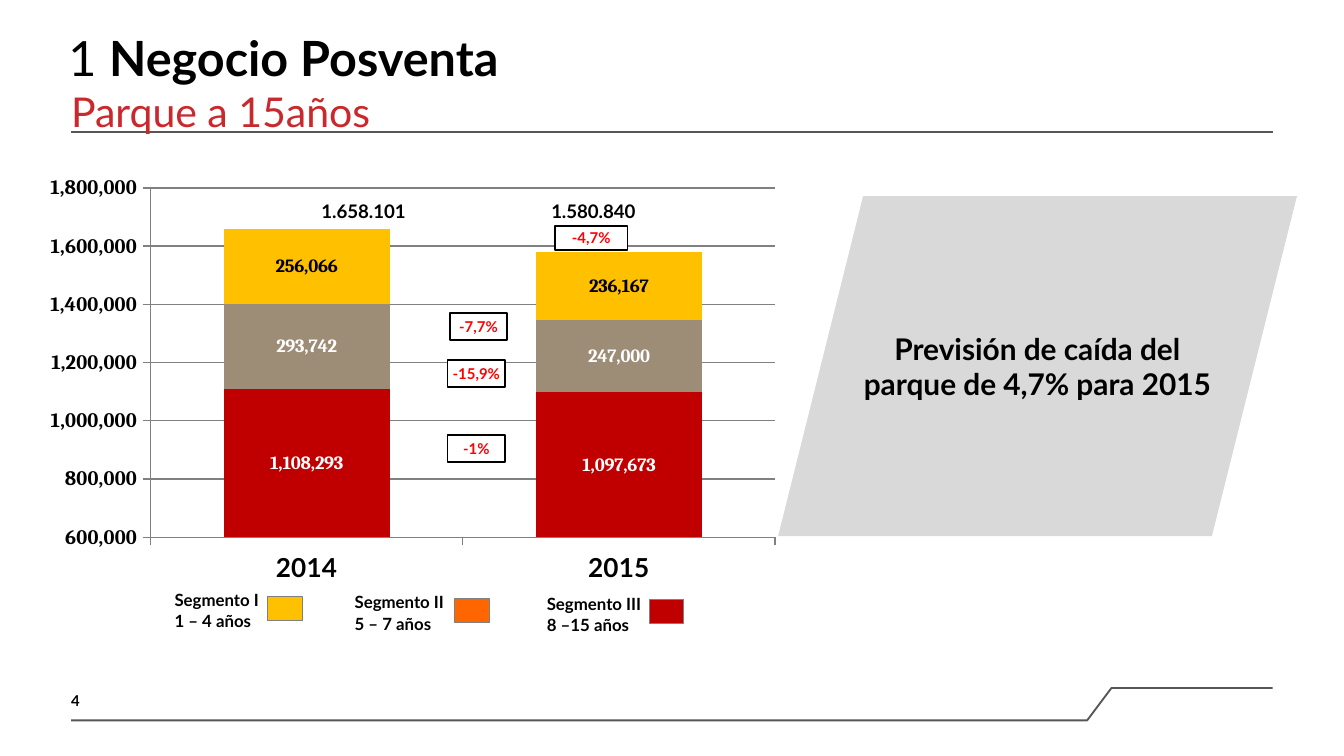
from typing import NamedTuple

from lxml import etree
from pptx import Presentation
from pptx.chart.data import CategoryChartData
from pptx.dml.color import RGBColor
from pptx.enum.chart import XL_CHART_TYPE as ChartType, XL_TICK_MARK as Tick
from pptx.enum.shapes import MSO_CONNECTOR as Connector, MSO_SHAPE as Shape
from pptx.enum.text import MSO_ANCHOR as Anchor, PP_ALIGN as Align
from pptx.oxml import parse_xml
from pptx.oxml.ns import nsdecls, qn
from pptx.util import Inches, Pt

BLACK = RGBColor(0, 0, 0)
WHITE = RGBColor(255, 255, 255)
RULE = RGBColor(0x56, 0x56, 0x56)
GREY = RGBColor(0x80, 0x80, 0x80)
PANEL = RGBColor(0xD9, 0xD9, 0xD9)
SUBTITLE = RGBColor(0xC9, 0x28, 0x2D)
RED = RGBColor(255, 0, 0)
DARK_RED = RGBColor(0xC0, 0, 0)
TAUPE = RGBColor(0x9D, 0x8D, 0x77)
YELLOW = RGBColor(0xFF, 0xC0, 0)
ORANGE = RGBColor(0xFF, 0x66, 0)


class Box(NamedTuple):
    x: float
    y: float
    w: float
    h: float


class Series(NamedTuple):
    name: str
    values: tuple
    color: RGBColor
    label_color: RGBColor


class Change(NamedTuple):
    text: str
    box: Box


class LegendItem(NamedTuple):
    lines: tuple
    text_box: Box
    swatch: Box
    color: RGBColor


SERIES = [
    Series("Series 1", (1108293, 1097673), DARK_RED, WHITE),
    Series("Series 2", (293742, 247000), TAUPE, WHITE),
    Series("Series 3", (256066, 236167), YELLOW, BLACK),
]
TOTALS = [("1.658.101", 2.28), ("1.580.840", 3.99)]
CHANGES = [
    Change("-4,7%", Box(4.13, 1.68, 0.54, 0.18)),
    Change("-7,7%", Box(3.35, 2.33, 0.42, 0.2)),
    Change("-15,9%", Box(3.33, 2.68, 0.43, 0.2)),
    Change("-1%", Box(3.33, 3.24, 0.43, 0.2)),
]
LEGEND = [
    LegendItem(("Segmento I", "1 – 4 años"), Box(1.2, 4.39, 1.12, 0.36),
               Box(1.99, 4.44, 0.26, 0.18), YELLOW),
    LegendItem(("Segmento II", "5 – 7 años"), Box(2.54, 4.41, 1.12, 0.36),
               Box(3.38, 4.45, 0.26, 0.18), ORANGE),
    LegendItem(("Segmento III", "8 –15 años"), Box(3.97, 4.42, 1.18, 0.36),
               Box(4.83, 4.46, 0.26, 0.18), DARK_RED),
]


def inches(box: Box) -> list:
    return [Inches(v) for v in box]


def set_font(font, size: float, color: RGBColor = BLACK, bold: bool = True,
             name: str = "Lato") -> None:
    values = {"size": Pt(size), "bold": bold, "name": name}
    for key, value in values.items():
        setattr(font, key, value)
    font.color.rgb = color


def set_frame(tf, margins: tuple, anchor=Anchor.TOP) -> None:
    tf.word_wrap = True
    tf.vertical_anchor = anchor
    sides = ("margin_left", "margin_top", "margin_right", "margin_bottom")
    for side, value in zip(sides, margins):
        setattr(tf, side, Inches(value))


def add_run(p, text: str, size: float, color: RGBColor = BLACK, bold: bool = True) -> None:
    r = p.add_run()
    r.text = text
    set_font(r.font, size, color, bold)


def add_text(s, box: Box, margins: tuple = (0, 0, 0, 0), anchor=Anchor.TOP):
    tf = s.shapes.add_textbox(*inches(box)).text_frame
    set_frame(tf, margins, anchor)
    return tf


def add_filled(s, kind, box: Box, fill: RGBColor, line: RGBColor = None, width: float = 1):
    sp = s.shapes.add_shape(kind, *inches(box))
    sp.shadow.inherit = False
    sp.fill.solid()
    sp.fill.fore_color.rgb = fill
    if line is None:
        sp.line.fill.background()
    else:
        sp.line.color.rgb = line
        sp.line.width = Pt(width)
    return sp


def add_label_shape(s, kind, box: Box, fill: RGBColor, text: str, size: float,
                    color: RGBColor, line: RGBColor = None, margin: float = 0) -> None:
    tf = add_filled(s, kind, box, fill, line).text_frame
    set_frame(tf, (margin,) * 4, Anchor.MIDDLE)
    p = tf.paragraphs[0]
    p.alignment = Align.CENTER
    add_run(p, text, size, color)


def add_rules(s) -> None:
    rule = s.shapes.add_connector(Connector.STRAIGHT, Inches(0.53), Inches(0.98),
                                  Inches(9.47), Inches(0.98))
    etree.SubElement(rule._element.spPr, qn("a:effectLst"))
    builder = s.shapes.build_freeform(Inches(0.53), Inches(5.36))
    points = [(8.09, 5.36), (8.27, 5.12), (9.47, 5.12)]
    builder.add_line_segments([(Inches(x), Inches(y)) for x, y in points], close=False)
    footer = builder.convert_to_shape()
    footer.shadow.inherit = False
    footer.fill.background()
    for sp in (rule, footer):
        sp.line.color.rgb = RULE
        sp.line.width = Pt(1)


def add_stacked_chart(s) -> None:
    data = CategoryChartData(number_format="#,##0")
    data.categories = ["2014", "2015"]
    for item in SERIES:
        data.add_series(item.name, item.values)
    chart = s.shapes.add_chart(ChartType.COLUMN_STACKED,
                               *inches(Box(0.28, 1.24, 5.6, 3.17)), data).chart
    chart.has_legend = chart.has_title = False
    set_font(chart.font, 10, bold=False, name="Cambria")

    # Axes
    cat, val = chart.category_axis, chart.value_axis
    set_font(cat.tick_labels.font, 14)
    set_font(val.tick_labels.font, 11, name="Cambria")
    scale = {"minimum_scale": 600000, "maximum_scale": 1800000, "major_unit": 200000}
    for key, value in scale.items():
        setattr(val, key, value)
    val.tick_labels.number_format = "#,##0"
    val.tick_labels.number_format_is_linked = False
    for axis in (cat, val):
        axis.major_tick_mark = Tick.OUTSIDE
        axis.format.line.color.rgb = GREY
    val.major_gridlines.format.line.color.rgb = GREY

    # Columns and their labels
    plot = chart.plots[0]
    plot.gap_width, plot.overlap, plot.vary_by_categories = 88, 100, False
    for series, item in zip(plot.series, SERIES):
        series.format.fill.solid()
        series.format.fill.fore_color.rgb = item.color
        labels = series.data_labels
        labels.show_value = True
        set_font(labels.font, 10, item.label_color, name="Cambria")

    # Plot area position, as fractions of the chart
    area = chart._chartSpace.chart.plotArea
    for old in area.findall(qn("c:layout")):
        area.remove(old)
    fractions = {"x": 0.15, "y": 0.05, "w": 0.83, "h": 0.82}
    parts = "".join(f'<c:{k}Mode val="edge"/>' for k in "xy")
    parts += "".join(f'<c:{k} val="{v}"/>' for k, v in fractions.items())
    area.insert(0, parse_xml(
        f'<c:layout {nsdecls("c")}><c:manualLayout><c:layoutTarget val="inner"/>'
        f'{parts}</c:manualLayout></c:layout>'))


def add_legend_item(s, item: LegendItem) -> None:
    add_filled(s, Shape.RECTANGLE, item.swatch, item.color, GREY, 0.5)
    tf = add_text(s, item.text_box, (0.1, 0.05, 0.1, 0.05))
    for i, line in enumerate(item.lines):
        p = tf.add_paragraph() if i else tf.paragraphs[0]
        p.line_spacing = 0.6
        if i:
            p.space_before = Pt(5)
        add_run(p, line, 9)


def main() -> None:
    prs = Presentation()
    prs.slide_width = Inches(10)
    prs.slide_height = prs.slide_width * 9 // 16
    s = prs.slides.add_slide(prs.slide_layouts[6])

    # Rules, heading and page number
    add_rules(s)
    title = add_text(s, Box(0.51, 0.21, 8.94, 0.35)).paragraphs[0]
    add_run(title, "1 ", 26, bold=False)
    add_run(title, "Negocio Posventa", 26)
    subtitle = add_text(s, Box(0.53, 0.64, 8.94, 0.35)).paragraphs[0]
    add_run(subtitle, "Parque a 15años", 22, SUBTITLE, False)
    number = add_text(s, Box(0.53, 5.12, 0.37, 0.16), anchor=Anchor.BOTTOM)
    add_run(number.paragraphs[0], "4", 8)

    # Chart with totals, changes and legend
    add_stacked_chart(s)
    for text, x in TOTALS:
        p = add_text(s, Box(x, 1.44, 0.85, 0.23), (0.1, 0.05, 0.1, 0.05)).paragraphs[0]
        p.alignment = Align.CENTER
        add_run(p, text, 10)
    for change in CHANGES:
        add_label_shape(s, Shape.RECTANGLE, change.box, WHITE, change.text, 8, RED, BLACK)
    for item in LEGEND:
        add_legend_item(s, item)

    # Conclusion
    add_label_shape(s, Shape.PARALLELOGRAM, Box(5.79, 1.46, 3.86, 2.53), PANEL,
                    "Previsión de caída del parque de 4,7% para 2015", 16, BLACK, margin=0.02)
    prs.save("out.pptx")


if __name__ == "__main__":
    main()
